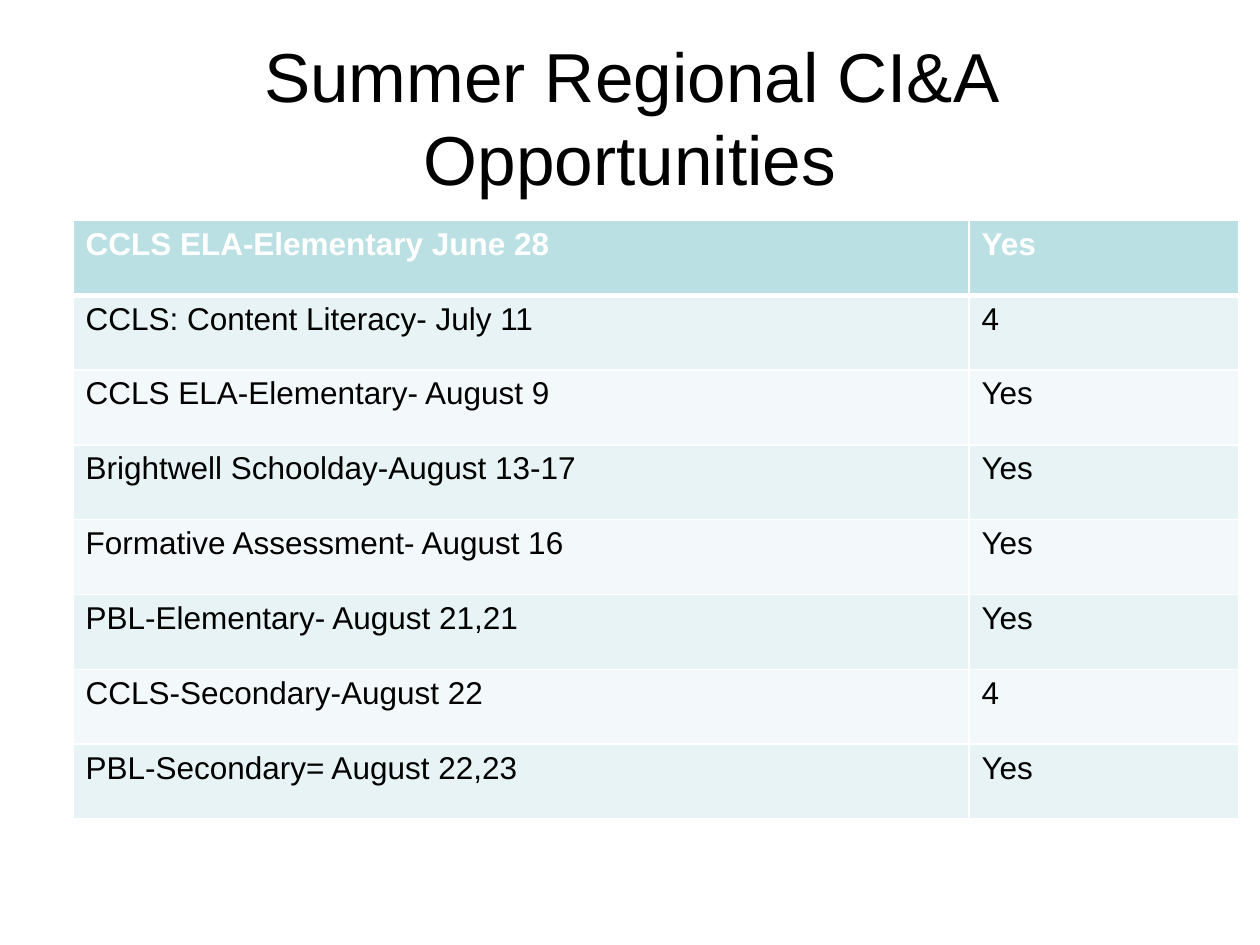
import pptx
import pptx.util
import pptx.dml.color
import pptx.enum.text
import pptx.oxml
import pptx.oxml.ns


def tint(code):
    return pptx.dml.color.RGBColor.from_string(code)


def edge(cell, side, width):
    props = cell._tc.get_or_add_tcPr()
    line = pptx.oxml.parse_xml(
        f'<a:{side} {pptx.oxml.ns.nsdecls("a")} w="{pptx.util.Pt(width)}">'
        f'<a:solidFill><a:srgbClr val="FFFFFF"/></a:solidFill></a:{side}>')
    props.append(line)


deck = pptx.Presentation()
deck.slide_width = pptx.util.Inches(10)
deck.slide_height = pptx.util.Inches(7.5)
wide, high = deck.slide_width, deck.slide_height
slide = deck.slides.add_slide(deck.slide_layouts[6])

box = slide.shapes.add_textbox(
    int(wide * 0.05), int(high * 0.04), int(wide * 0.9), int(high / 6))
frame = box.text_frame
frame.word_wrap = True
frame.vertical_anchor = pptx.enum.text.MSO_ANCHOR.MIDDLE
frame.text = "Summer Regional CI&A Opportunities"
title = frame.paragraphs[0]
title.alignment = pptx.enum.text.PP_ALIGN.CENTER
title.font.name = "Arial"
title.font.size = pptx.util.Pt(39.6)
title.font.color.rgb = tint("000000")

rows = [
    ("CCLS ELA-Elementary June 28", "Yes"),
    ("CCLS: Content Literacy- July 11", "4"),
    ("CCLS ELA-Elementary- August 9", "Yes"),
    ("Brightwell Schoolday-August 13-17", "Yes"),
    ("Formative Assessment- August 16", "Yes"),
    ("PBL-Elementary- August 21,21", "Yes"),
    ("CCLS-Secondary-August 22", "4"),
    ("PBL-Secondary= August 22,23", "Yes"),
]
widths = [7.11, 2.14]
bands = ["F3F9FA", "E7F3F4"]
tall = pptx.util.Inches(4.75)

table = slide.shapes.add_table(
    len(rows), len(widths), pptx.util.Inches(0.58), pptx.util.Inches(1.75),
    pptx.util.Inches(sum(widths)), tall).table
for col, width in zip(table.columns, widths):
    col.width = pptx.util.Inches(width)

for r, words in enumerate(rows):
    head = r == 0
    for c, word in enumerate(words):
        cell = table.cell(r, c)
        cell.text = word
        font = cell.text_frame.paragraphs[0].font
        font.name = "Arial"
        font.size = pptx.util.Pt(18)
        font.bold = head
        font.color.rgb = tint("FFFFFF" if head else "000000")
        for side in ("lnL", "lnR", "lnT", "lnB"):
            thick = (head and side == "lnB") or (r == 1 and side == "lnT")
            edge(cell, side, 3 if thick else 1)
        cell.fill.solid()
        cell.fill.fore_color.rgb = tint("BBE0E3" if head else bands[r % 2])

deck.save("out.pptx")
